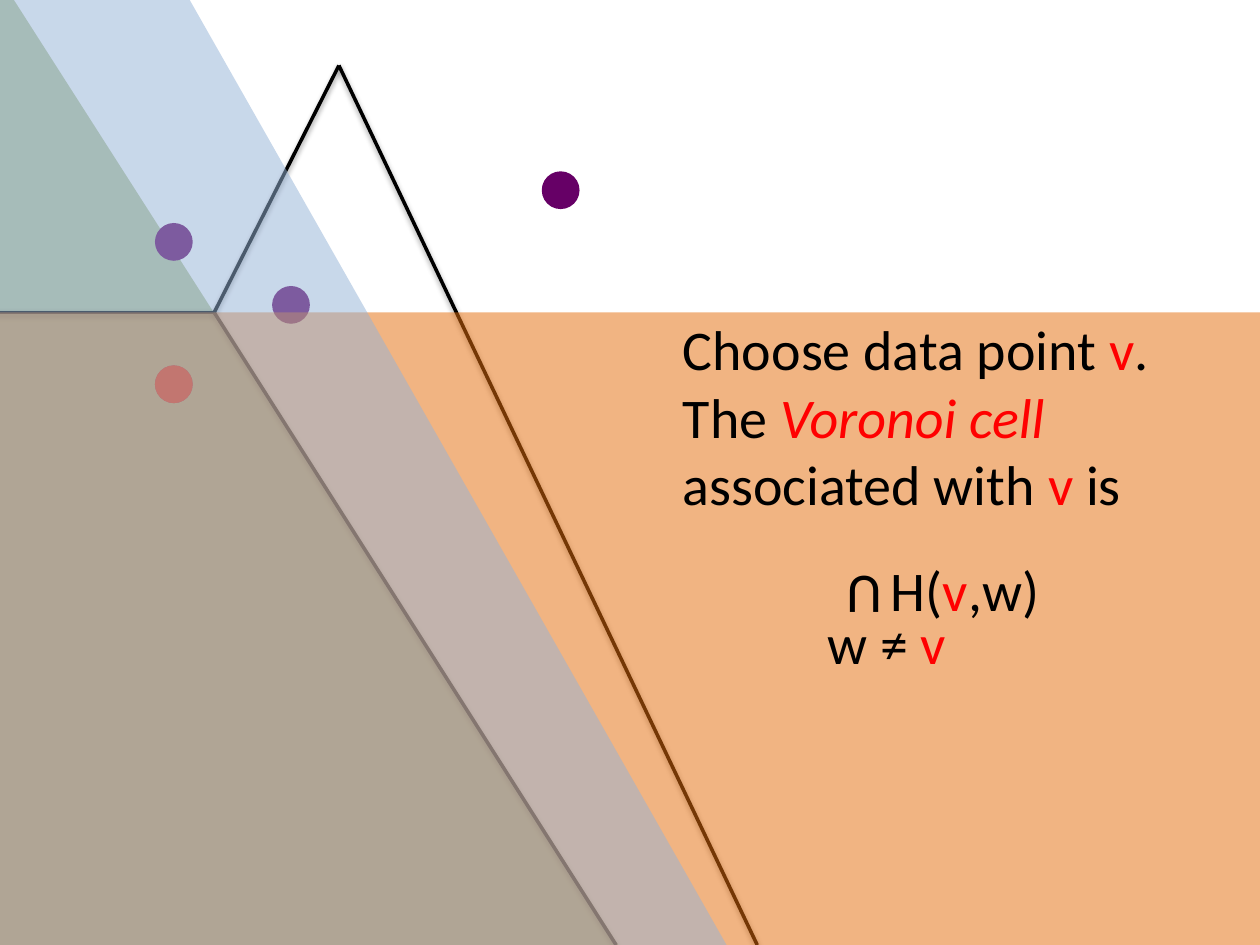
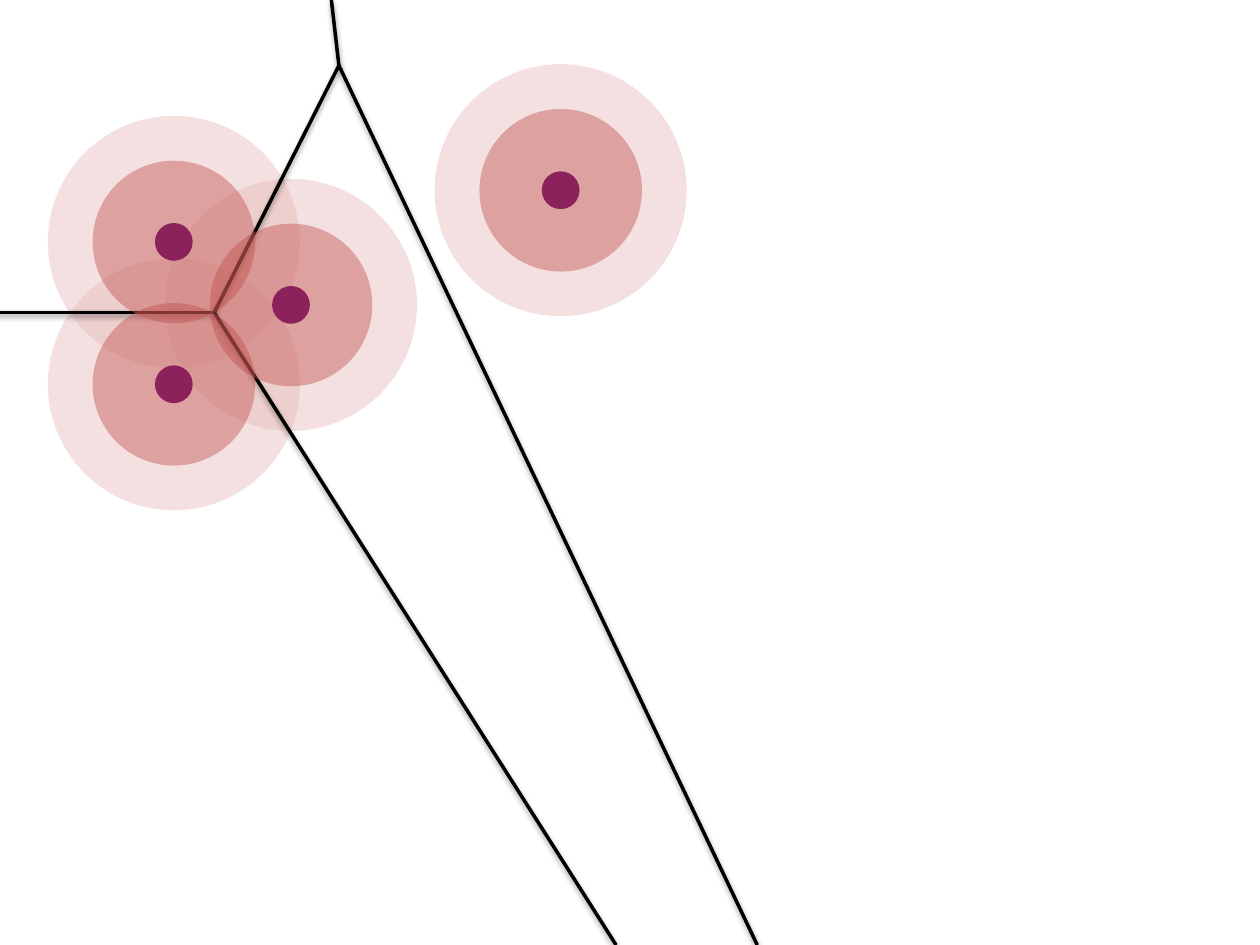
from lxml import etree
from pptx import Presentation
from pptx.dml.color import RGBColor as RGB
from pptx.enum.shapes import MSO_CONNECTOR as CONN, MSO_SHAPE as SHAPE
from pptx.enum.text import MSO_ANCHOR as ANCHOR, PP_ALIGN as ALIGN
from pptx.oxml import parse_xml
from pptx.oxml.ns import nsdecls, qn
from pptx.util import Inches, Pt

COLS, ROWS = 10, 7.5
CELL = Inches(1)  # side of one square of the slide grid
FONT = "Calibri"
COLORS = {
    "ink": "000000", "chosen": "FF0000", "site": "660066",
    "green": "77933C", "orange": "E46C0A", "blue": "95B3D7",
    "halo": "E6B9B8", "disc": "C0504D",
}

# Sites as (column, row) centres; the first one is the chosen point v.
SITES = [(1.38, 3.05), (2.31, 2.42), (1.38, 1.92), (4.45, 1.51)]
SITE_SIZE, DISC_SIZE, HALO_SIZE = 0.3, 1.29, 2

# Voronoi vertices and the places where the edges leave the slide.
LOWER, UPPER = (1.7, 2.48), (2.69, 0.52)
LEFT_END, TOP_END = (-0.12, 2.48), (2.63, 0)
EDGES = [((4.89, ROWS), LOWER), (LOWER, UPPER),
         (UPPER, (6.01, ROWS)), (LOWER, LEFT_END)]

SHADOW = f"""<a:effectLst {nsdecls('a')}>
  <a:outerShdw blurRad="40000" dist="20000" dir="5400000" rotWithShape="0">
    <a:srgbClr val="000000"><a:alpha val="38000"/></a:srgbClr>
  </a:outerShdw></a:effectLst>"""


def grid(*cells):
    return [round(n * CELL) for n in cells]


def color(name):
    return RGB.from_string(COLORS[name])


def add_shape(s, kind, box, fill, opacity=100, rotation=0):
    sp = s.shapes.add_shape(kind, *grid(*box))
    sp.shadow.inherit = False
    sp.rotation = rotation
    sp.line.fill.background()
    sp.fill.solid()
    sp.fill.fore_color.rgb = color(fill)
    if opacity < 100:
        rgb = sp.fill._xPr.find(f".//{qn('a:srgbClr')}")
        etree.SubElement(rgb, qn("a:alpha")).set("val", str(opacity * 1000))


def add_half_plane(s, box, fill, rotation=0):
    add_shape(s, SHAPE.RECTANGLE, box, fill, 51, rotation)


def add_circle(s, center, size, fill, opacity=100):
    x, y = center
    box = (x - size / 2, y - size / 2, size, size)
    add_shape(s, SHAPE.OVAL, box, fill, opacity)


def add_circles(s, size, fill, opacity=100):
    for site in SITES:
        add_circle(s, site, size, fill, opacity)


def add_edges(s, edges):
    for start, end in edges:
        line = s.shapes.add_connector(CONN.STRAIGHT, *grid(*start, *end))
        line.line.color.rgb = color("ink")
        line.line.width = Pt(2)
        line._element.spPr.append(parse_xml(SHADOW))


def add_text(s, box, *paragraphs, rotation=0):
    """Add a text box; each paragraph is a list of (text, format) runs."""
    sp = s.shapes.add_textbox(*grid(*box))
    sp.rotation = rotation
    tf = sp.text_frame
    tf.word_wrap = True
    tf.vertical_anchor = ANCHOR.TOP
    for i, runs in enumerate(paragraphs):
        p = tf.paragraphs[0] if i == 0 else tf.add_paragraph()
        for text, style in runs:
            add_run(p, text, **style)
    return tf


def add_run(p, text, fill="ink", italic=False):
    r = p.add_run()
    r.text = text
    r.font.name, r.font.size = FONT, Pt(32)
    r.font.italic = italic
    r.font.color.rgb = color(fill)


def plain(text):
    return text, {}


def red(text, **style):
    return text, {"fill": "chosen", **style}


def add_definition(s):
    tf = add_text(
        s, (5.32, 2.45, 4.68, 2.6),
        [plain("Choose data point "), red("v"), plain(".")],
        [plain("The "), red("Voronoi cell ", italic=True),
         plain("associated with "), red("v"), plain(" is")],
        [plain("H("), red("v"), plain(",w)")])
    formula = tf.paragraphs[-1]
    formula.alignment = ALIGN.CENTER
    formula.space_before = Pt(22)
    # A letter U turned upside down is the intersection sign.
    add_text(s, (6.76, 4.43, 0.34, 0.64), [plain("U")], rotation=180)
    add_text(s, (6.47, 4.78, 1.82, 0.64), [plain("w ≠ "), red("v")])


def build_cell_slide(s):
    add_half_plane(s, (-4.22, 2.82, 9.87, 4.38), "green", 57.4)
    add_circles(s, SITE_SIZE, "site")
    add_circle(s, SITES[0], SITE_SIZE, "chosen")
    add_edges(s, EDGES)
    add_half_plane(s, (-0.12, 2.48, 10.15, 5.05), "orange")
    add_half_plane(s, (-3.78, 2.41, 10.37, 5.05), "blue", 60.4)
    add_definition(s)


def build_growing_discs_slide(s):
    add_circles(s, HALO_SIZE, "halo", 43)
    add_circles(s, SITE_SIZE, "site")
    add_edges(s, EDGES + [(UPPER, TOP_END)])
    add_circles(s, DISC_SIZE, "disc", 43)


def main():
    prs = Presentation()
    prs.slide_width, prs.slide_height = grid(COLS, ROWS)
    blank = prs.slide_layouts[6]
    for build in (build_cell_slide, build_growing_discs_slide):
        build(prs.slides.add_slide(blank))
    prs.save("out.pptx")


if __name__ == "__main__":
    main()
